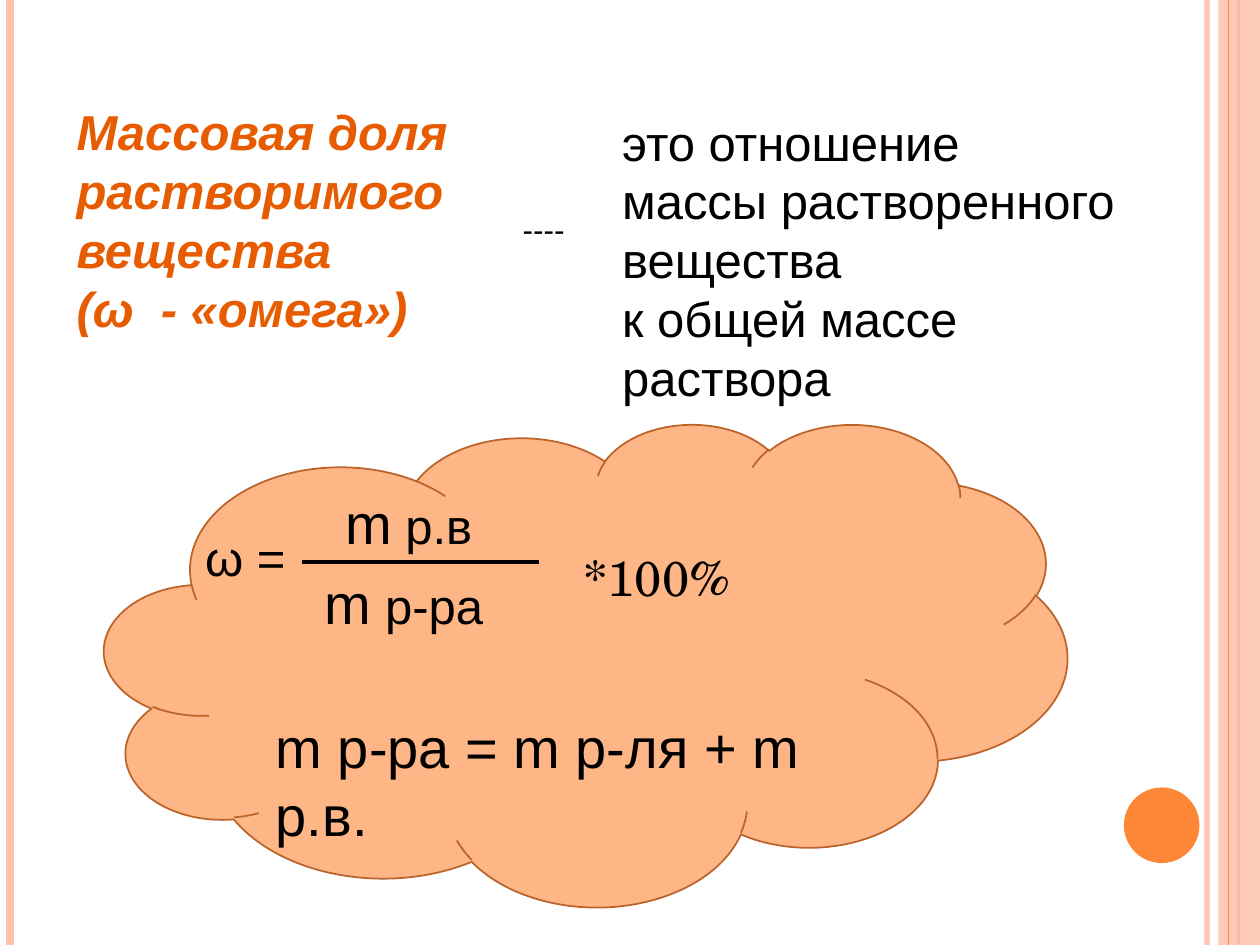
from lxml.etree import SubElement
from pptx import Presentation
from pptx.dml.color import RGBColor
from pptx.enum.shapes import MSO_CONNECTOR, MSO_SHAPE
from pptx.enum.text import MSO_AUTO_SIZE
from pptx.oxml.ns import qn
from pptx.util import Inches, Pt

PEACH = RGBColor(0xFE, 0xC3, 0xAE)
ORANGE = RGBColor(0xFE, 0x86, 0x37)
CLOUD = RGBColor(0xFE, 0xB6, 0x87)
BROWN = RGBColor(0xBC, 0x63, 0x29)
TERM = RGBColor(0xE7, 0x5C, 0x01)
BLACK = RGBColor(0, 0, 0)
SANS, SERIF = "Arial", "TeX Gyre Schola"
WIDTH, HEIGHT = 10, 7.5

LEFT_RULES = [(9.58, PEACH, 3, 93), (0.08, PEACH, 4.5, 100), (9.83, ORANGE, 1.5, 100)]
BAND = (9.67, 0, 0.33, HEIGHT)
BAND_RULE = (9.75, ORANGE, 0.75, 100)
DOT = (8.92, 6.25, 0.6, 0.6)
CLOUD_BOX = (0.83, 3.36, 7.64, 3.83)
FRACTION_BAR = (2.4, 4.46, 4.28, 4.46)

TERM_TEXT = ((0.51, 0.76, 3.54, 2.67),
             [("Массовая доля растворимого вещества\n(ω  - «омега»)", 28)])
TEXTS = [
    ((4.84, 0.84, 4.17, 2.44),
     [("это отношение\nмассы растворенного вещества\nк общей массе раствора", 28)]),
    ((1.53, 4.14, 0.94, 0.57), [("ω =", 28)]),
    ((4.05, 1.62, 0.64, 0.4), [("----", 18)]),
]
PERCENT = ((4.53, 4.3, 1.95, 0.57), [("*100%", 28)])
FORMULAS = [
    ((2.64, 3.83, 1.21, 0.63), [("m", 32), (" р.в", 28)]),
    ((2.48, 4.46, 1.46, 0.63), [("m", 32), (" р-ра", 28)]),
    ((2.09, 5.61, 5.2, 0.63), [("m р-ра = m р-ля + m р.в.", 32)]),
]


def set_alpha(sp, percent):
    if percent < 100:
        color = next(sp._element.spPr.iter(qn("a:srgbClr")))
        SubElement(color, qn("a:alpha")).set("val", str(percent * 1000))


def add_line(s, ends, color, width, alpha=100):
    line = s.shapes.add_connector(MSO_CONNECTOR.STRAIGHT, *map(Inches, ends))
    line.line.color.rgb = color
    line.line.width = Pt(width)
    set_alpha(line, alpha)
    SubElement(line._element.spPr, qn("a:effectLst"))


def add_rule(s, x, color, width, alpha):
    add_line(s, (x, 0, x, HEIGHT), color, width, alpha)


def add_shape(s, kind, box, fill, outline=None, alpha=100):
    sp = s.shapes.add_shape(kind, *map(Inches, box))
    sp.shadow.inherit = False
    sp.fill.solid()
    sp.fill.fore_color.rgb = fill
    set_alpha(sp, alpha)
    if outline:
        sp.line.color.rgb = outline
        sp.line.width = Pt(1)
    else:
        sp.line.fill.background()


def add_text(s, box, runs, font=SANS, color=BLACK, strong=False, wrap=True):
    tf = s.shapes.add_textbox(*map(Inches, box)).text_frame
    tf.word_wrap = wrap
    tf.auto_size = MSO_AUTO_SIZE.SHAPE_TO_FIT_TEXT
    p = tf.paragraphs[0]
    for text, size in runs:
        for i, part in enumerate(text.split("\n")):
            if i:
                p.add_line_break()
            r = p.add_run()
            r.text = part
            r.font.name = font
            r.font.size = Pt(size)
            r.font.color.rgb = color
            r.font.bold = r.font.italic = strong


def main():
    prs = Presentation()
    prs.slide_width, prs.slide_height = Inches(WIDTH), Inches(HEIGHT)
    s = prs.slides.add_slide(prs.slide_layouts[6])

    for rule in LEFT_RULES:
        add_rule(s, *rule)
    add_shape(s, MSO_SHAPE.RECTANGLE, BAND, PEACH, alpha=87)
    add_rule(s, *BAND_RULE)
    add_shape(s, MSO_SHAPE.OVAL, DOT, ORANGE)

    add_shape(s, MSO_SHAPE.CLOUD, CLOUD_BOX, CLOUD, BROWN)
    add_text(s, *TERM_TEXT, color=TERM, strong=True)
    for box, runs in TEXTS:
        add_text(s, box, runs)
    add_text(s, *PERCENT, font=SERIF)
    for box, runs in FORMULAS:
        add_text(s, box, runs, wrap=False)
    add_line(s, FRACTION_BAR, BLACK, 2.25)

    prs.save("out.pptx")


if __name__ == "__main__":
    main()
